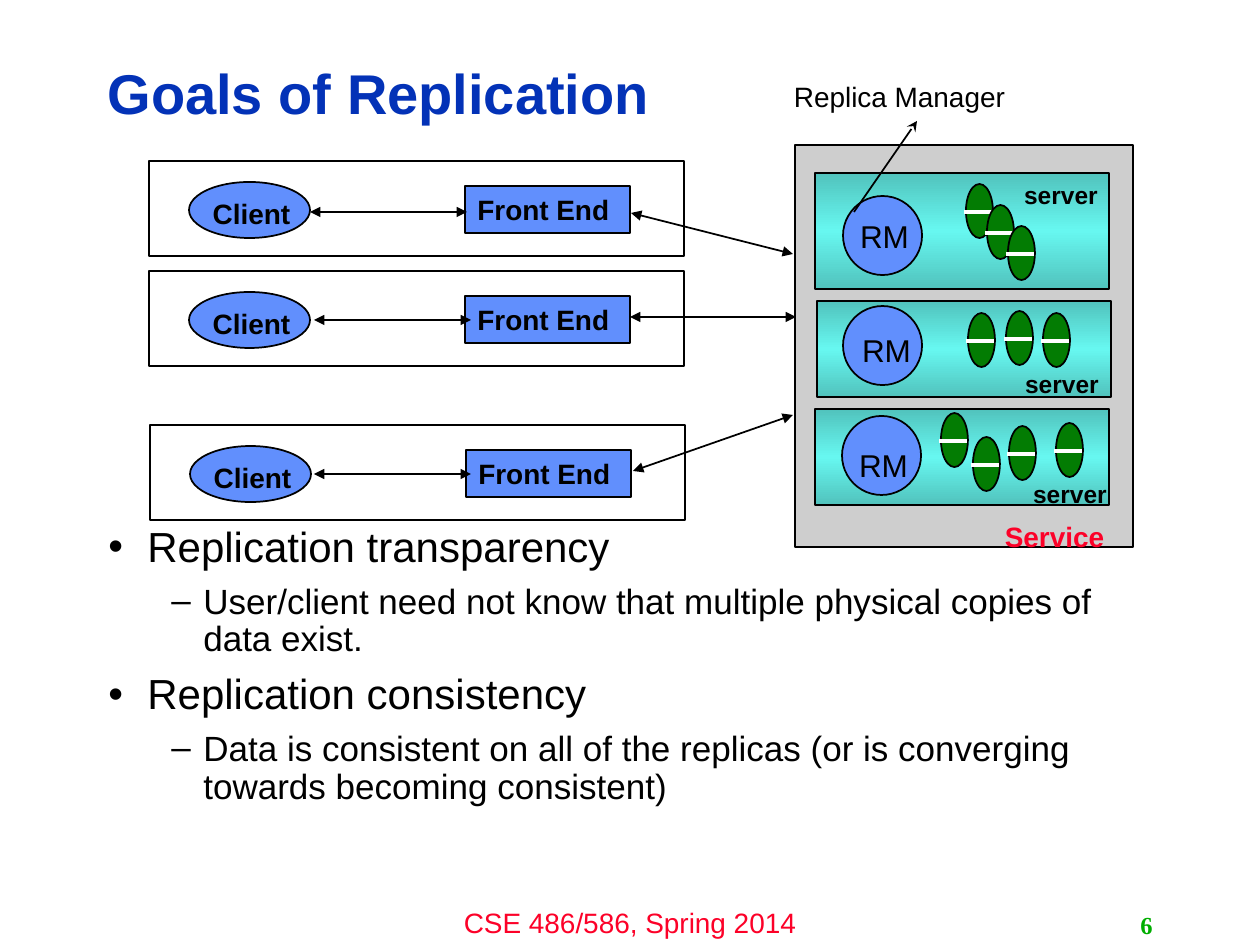
"""Builds the "Goals of Replication" slide: clients and front ends talking to a replicated service."""
from copy import deepcopy
from dataclasses import dataclass
from typing import NamedTuple

from lxml.etree import SubElement
from pptx import Presentation
from pptx.dml.color import RGBColor
from pptx.enum.shapes import MSO_CONNECTOR as Connector, MSO_SHAPE as Preset
from pptx.enum.text import MSO_ANCHOR as Anchor, MSO_AUTO_SIZE as AutoSize, PP_ALIGN as Align
from pptx.oxml.ns import qn
from pptx.util import Emu, Pt

EMU_PER_PX = 914400 / 126


@dataclass(frozen=True)
class Theme:
    font: str = "Arial"
    number_font: str = "Times New Roman"
    ink: str = "000000"
    white: str = "FFFFFF"
    title: str = "0332B7"
    accent: str = "FC0128"
    number: str = "00AE00"
    node: str = "618FFD"
    panel: str = "CECECE"
    server_edge: str = "51C3BD"
    server_middle: str = "67F7F0"
    disc: str = "037C03"
    title_size: int = 32
    body_size: int = 24
    sub_size: int = 20
    manager_size: int = 18
    label_size: int = 16
    small_size: int = 14
    line: float = 1
    thick_line: float = 2.25


THEME = Theme()


class Point(NamedTuple):
    x: int
    y: int


class Box(NamedTuple):
    left: int
    top: int
    width: int
    height: int


@dataclass(frozen=True)
class ClientRow:
    corner: Point
    request: tuple[Point, Point]
    service: tuple[Point, Point]


@dataclass(frozen=True)
class Server:
    panel: Box
    manager: Point
    manager_label: Point
    label: Point
    discs: tuple[Point, ...]


@dataclass(frozen=True)
class Style:
    size: int = THEME.label_size
    color: str = THEME.ink
    bold: bool = False
    font: str = THEME.font
    align: Align = Align.CENTER


LABEL = Style(bold=True)
FRONT_END = Style(bold=True, align=Align.LEFT)
MANAGER = Style(THEME.manager_size)
SERVER_LABEL = Style(THEME.small_size, bold=True)

CLIENT_ROWS = (
    ClientRow(Point(149, 161), (Point(310, 212), Point(467, 212)), (Point(631, 213), Point(793, 254))),
    ClientRow(Point(149, 271), (Point(314, 320), Point(471, 320)), (Point(630, 317), Point(796, 317))),
    ClientRow(Point(150, 425), (Point(314, 474), Point(471, 474)), (Point(633, 471), Point(793, 415))),
)
SERVERS = (
    Server(Box(815, 173, 294, 116), Point(843, 196), Point(838, 211), Point(1007, 174),
           (Point(966, 184), Point(987, 205), Point(1008, 226))),
    Server(Box(817, 301, 294, 96), Point(843, 306), Point(840, 325), Point(1008, 363),
           (Point(968, 313), Point(1006, 311), Point(1043, 313))),
    Server(Box(815, 409, 294, 96), Point(842, 416), Point(837, 440), Point(1016, 473),
           (Point(941, 413), Point(973, 437), Point(1009, 426), Point(1056, 423))),
)
BULLETS = (
    (0, "Replication transparency"),
    (1, "User/client need not know that multiple physical copies of data exist."),
    (0, "Replication consistency"),
    (1, "Data is consistent on all of the replicas (or is converging towards becoming consistent)"),
)


def px(length: int) -> Emu:
    return Emu(round(length * EMU_PER_PX))


def place(box: Box) -> list[Emu]:
    return [px(length) for length in box]


def write(paragraph, text: str, style: Style) -> None:
    paragraph.alignment = style.align
    run = paragraph.add_run()
    run.text = text
    run.font.name = style.font
    run.font.size = Pt(style.size)
    run.font.bold = style.bold
    run.font.color.rgb = RGBColor.from_string(style.color)


def add_text(slide, box: Box, text: str, style: Style, wrap: bool = True) -> None:
    frame = slide.shapes.add_textbox(*place(box)).text_frame
    frame.word_wrap = wrap
    frame.vertical_anchor = Anchor.MIDDLE
    write(frame.paragraphs[0], text, style)


def add_shape(slide, preset: Preset, box: Box, fill: str | None = None):
    shape = slide.shapes.add_shape(preset, *place(box))
    shape.shadow.inherit = False
    if fill:
        shape.fill.solid()
        shape.fill.fore_color.rgb = RGBColor.from_string(fill)
    else:
        shape.fill.background()
    shape.line.color.rgb = RGBColor.from_string(THEME.ink)
    shape.line.width = Pt(THEME.line)
    return shape


def add_line(slide, start: Point, end: Point, color: str = THEME.ink, width: float = THEME.line,
             head: str | None = None, tail: str | None = None) -> None:
    line = slide.shapes.add_connector(Connector.STRAIGHT, *map(px, (*start, *end)))
    line.line.color.rgb = RGBColor.from_string(color)
    line.line.width = Pt(width)
    outline = line.line._get_or_add_ln()
    for tag, kind in (("a:headEnd", head), ("a:tailEnd", tail)):
        if kind:
            SubElement(outline, qn(tag), type=kind)
    SubElement(line._element.spPr, qn("a:effectLst"))


def shade_server(shape) -> None:
    shape.fill.gradient()
    shape.fill.gradient_angle = 90
    edge, middle = shape.fill.gradient_stops
    edge.color.rgb = RGBColor.from_string(THEME.server_edge)
    middle.color.rgb = RGBColor.from_string(THEME.server_middle)
    edge.position, middle.position = 0, 0.5
    stops = shape._element.spPr.find(qn("a:gradFill")).find(qn("a:gsLst"))
    last = deepcopy(stops[0])
    last.set("pos", "100000")
    stops.append(last)


def add_client_row(slide, row: ClientRow) -> None:
    x, y = row.corner
    add_shape(slide, Preset.RECTANGLE, Box(x, y, 535, 95))
    add_shape(slide, Preset.OVAL, Box(x + 40, y + 21, 121, 56), THEME.node)
    add_text(slide, Box(x + 42, y + 29, 121, 47), "Client", LABEL)
    front_end = add_shape(slide, Preset.RECTANGLE, Box(x + 316, y + 25, 165, 47), THEME.node)
    write(front_end.text_frame.paragraphs[0], "Front End", FRONT_END)
    for start, end in (row.request, row.service):
        add_line(slide, start, end, head="triangle", tail="triangle")


def add_server(slide, server: Server) -> None:
    shade_server(add_shape(slide, Preset.RECTANGLE, server.panel))
    add_shape(slide, Preset.OVAL, Box(*server.manager, 79, 79), THEME.node)
    add_text(slide, Box(*server.manager_label, 93, 50), "RM", MANAGER)
    for x, y in server.discs:
        add_shape(slide, Preset.OVAL, Box(x, y, 27, 54), THEME.disc)
        add_line(slide, Point(x - 2, y + 28), Point(x + 26, y + 28), THEME.white, THEME.thick_line)
    add_text(slide, Box(*server.label, 108, 42), "server", SERVER_LABEL)


def add_title(slide, text: str) -> None:
    title = slide.shapes.title
    title.left, title.top, title.width, title.height = place(Box(95, 45, 1005, 102))
    frame = title.text_frame
    frame.auto_size = AutoSize.NONE
    frame.vertical_anchor = Anchor.MIDDLE
    frame.paragraphs[0].line_spacing = 0.9
    write(frame.paragraphs[0], text, Style(THEME.title_size, THEME.title, True, align=Align.LEFT))


def add_bullets(slide) -> None:
    frame = slide.shapes.add_textbox(*place(Box(96, 520, 1058, 324))).text_frame
    frame.word_wrap = True
    levels = (("•", 39, 39, THEME.body_size, 8), ("–", 95, 32, THEME.sub_size, 7))
    for index, (level, text) in enumerate(BULLETS):
        mark, margin, hanging, size, gap = levels[level]
        paragraph = frame.add_paragraph() if index else frame.paragraphs[0]
        paragraph.level = level
        paragraph.line_spacing = 0.9
        paragraph.space_before = Pt(gap if index else 0)
        write(paragraph, text, Style(size, align=Align.LEFT))
        properties = paragraph._p.get_or_add_pPr()
        properties.set("marL", str(px(margin)))
        properties.set("indent", str(-px(hanging)))
        SubElement(properties, qn("a:buFont"), typeface=THEME.font)
        SubElement(properties, qn("a:buChar"), char=mark)


def main() -> None:
    presentation = Presentation()
    presentation.slide_width, presentation.slide_height = px(1260), px(945)
    slide = presentation.slides.add_slide(presentation.slide_layouts[5])
    add_title(slide, "Goals of Replication")
    add_bullets(slide)
    add_shape(slide, Preset.RECTANGLE, Box(795, 145, 338, 402), THEME.panel)
    for server in SERVERS:
        add_server(slide, server)
    for row in CLIENT_ROWS:
        add_client_row(slide, row)
    add_text(slide, Box(987, 514, 135, 45), "Service", Style(color=THEME.accent, bold=True))
    add_text(slide, Box(780, 73, 239, 47), "Replica Manager", Style(), wrap=False)
    add_line(slide, Point(854, 212), Point(917, 121), tail="stealth")
    add_text(slide, Box(420, 899, 420, 47), "CSE 486/586, Spring 2014", Style(color=THEME.accent))
    add_text(slide, Box(903, 905, 262, 40), "6",
             Style(THEME.small_size, THEME.number, True, THEME.number_font, Align.RIGHT))
    presentation.save("out.pptx")


if __name__ == "__main__":
    main()
